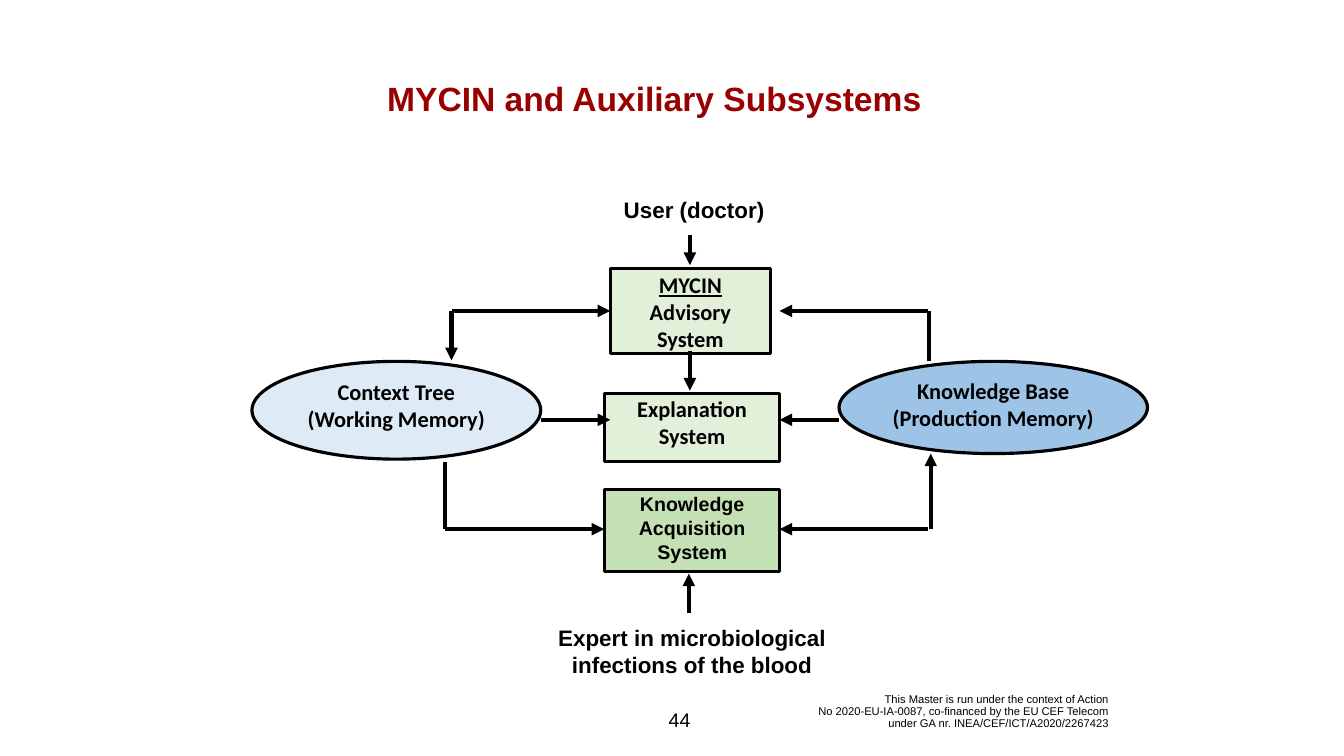
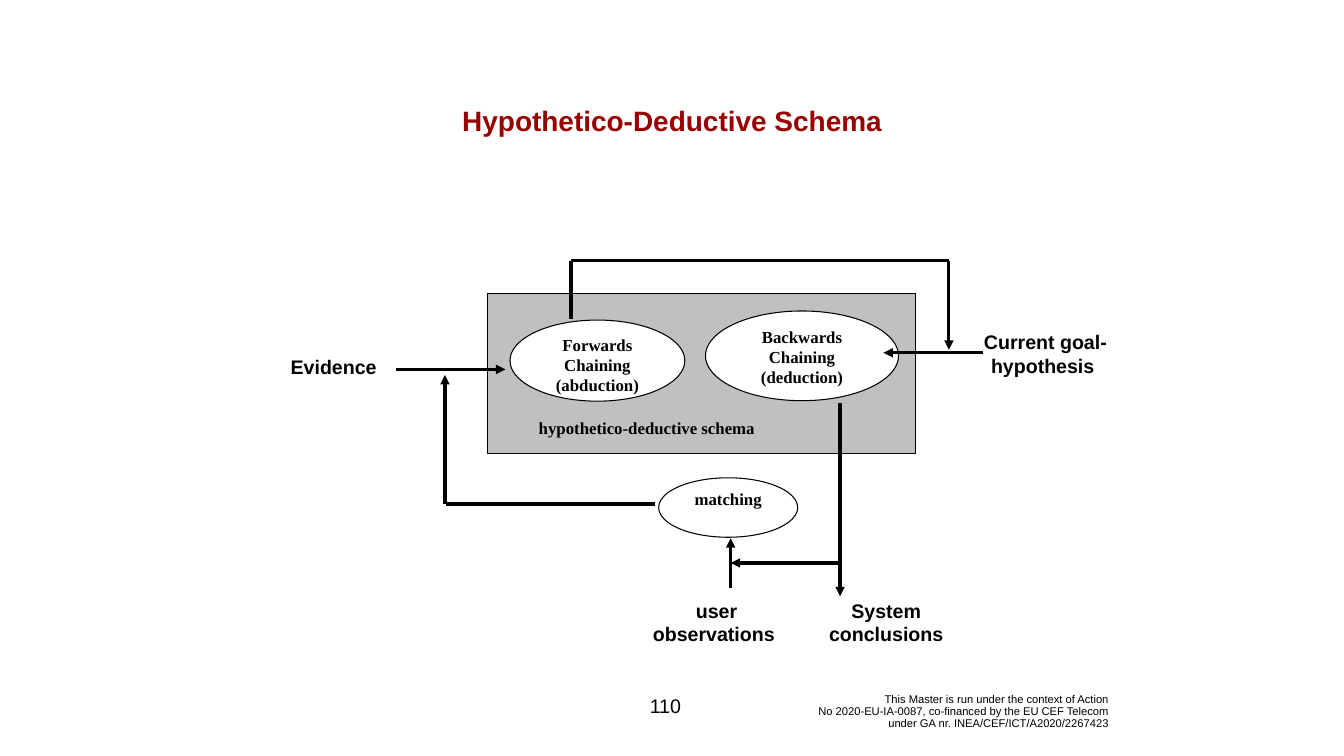
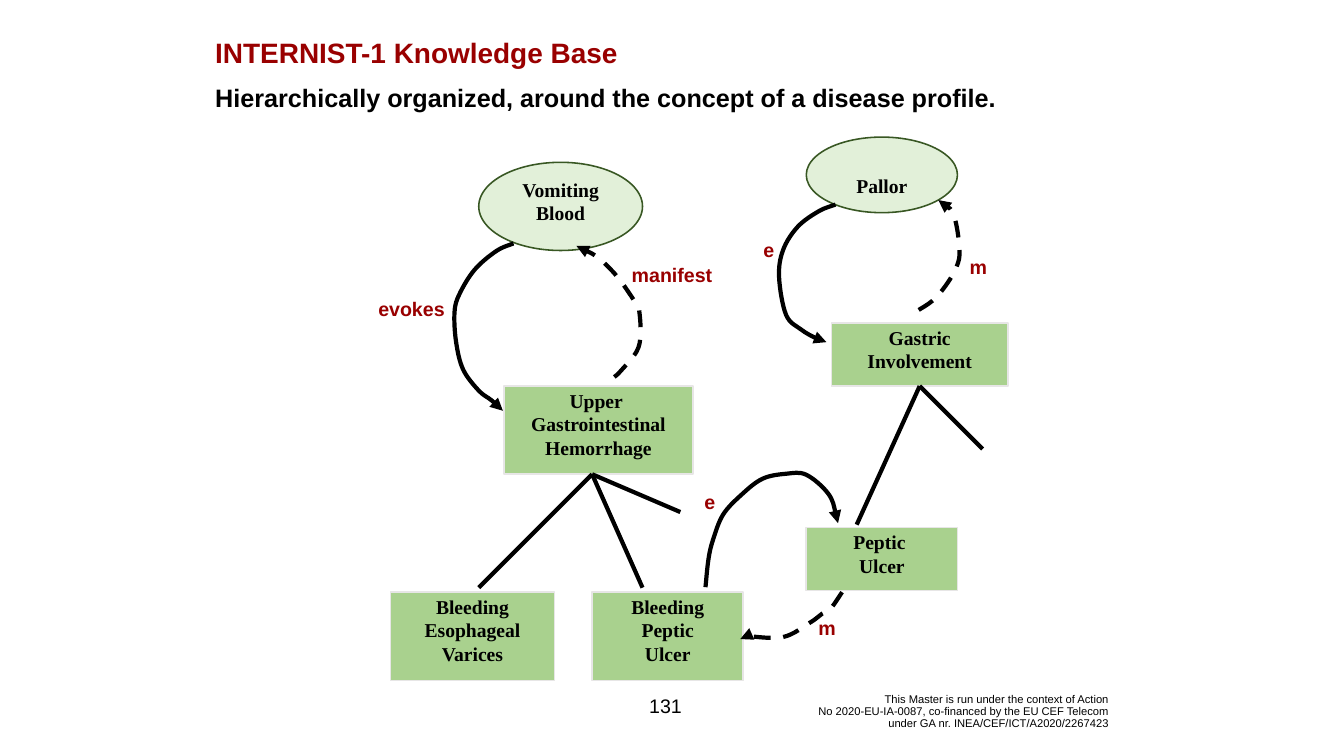
"""Build three slides on the MYCIN and INTERNIST-1 expert systems."""
import lxml.etree
import pptx
import pptx.dml.color
import pptx.enum.dml
import pptx.enum.shapes
import pptx.enum.text
import pptx.oxml.ns
import pptx.util

Inches, Pt = pptx.util.Inches, pptx.util.Pt
RGB = pptx.dml.color.RGBColor
Align = pptx.enum.text.PP_ALIGN
Anchor = pptx.enum.text.MSO_ANCHOR
Kind = pptx.enum.shapes.MSO_SHAPE
qn = pptx.oxml.ns.qn

BLACK = RGB(0x00, 0x00, 0x00)
WHITE = RGB(0xFF, 0xFF, 0xFF)
RED = RGB(0x99, 0x00, 0x00)
GRAY = RGB(0xC0, 0xC0, 0xC0)
PALE = RGB(0xE2, 0xF0, 0xD9)
MINT = RGB(0xC5, 0xE0, 0xB4)
GREEN = RGB(0xA9, 0xD1, 0x8E)
FOREST = RGB(0x38, 0x57, 0x23)
SILVER = RGB(0xE7, 0xE6, 0xE6)
ICE = RGB(0xDE, 0xEB, 0xF7)
SKY = RGB(0x9D, 0xC3, 0xE6)

RECT, OVAL = Kind.RECTANGLE, Kind.OVAL
SANS, SERIF, BODY = "Arial", "Times New Roman", "Calibri"

CREDIT = [
    "This Master is run under the context of Action",
    "No 2020-EU-IA-0087, co-financed by the EU CEF Telecom",
    "under GA nr. INEA/CEF/ICT/A2020/2267423",
]

MYCIN = {
    "title": ((5.83, 1.5, 14.5, 0.91), [("MYCIN and Auxiliary Subsystems ", 48, RED)], Align.CENTER),
    "page": ("44", 12.93, 13.87),
    "look": {"size": 32, "font": BODY},
    "edge": (BLACK, 4.5),
    "nodes": [
        (RECT, (12.11, 5.33, 3.18, 1.69), PALE, ["MYCIN", "Advisory System"], {"under": 1}),
        (RECT, (12, 7.8, 3.47, 1.36), PALE, ["Explanation System"], {}),
        (RECT, (12, 9.72, 3.47, 1.62), MINT, ["Knowledge Acquisition System"], {"size": 28, "font": SANS}),
        (OVAL, (5, 7.17, 5.73, 1.94), ICE, ["Context Tree", "(Working Memory)"], {}),
        (OVAL, (16.65, 7.17, 6.12, 1.83), SKY, ["Knowledge Base", "(Production Memory)"], {}),
    ],
    "weight": 6,
    "arrows": [
        (13.69, 4.67, 13.69, 5.26), (13.67, 12.17, 13.67, 11.38), (13.69, 6.96, 13.69, 7.75),
        (10.73, 8.33, 12.11, 8.33), (16.65, 8.33, 15.47, 8.33), (18.42, 6.17, 15.47, 6.17),
        (18.42, 10.5, 15.47, 10.5), (8.83, 10.5, 11.99, 10.5), (8.96, 6.17, 8.96, 7.15),
        (8.96, 6.17, 12.11, 6.17), (18.47, 10.5, 18.47, 9),
    ],
    "lines": [(8.83, 10.5, 8.83, 9.17), (18.43, 6.17, 18.43, 7.17)],
    "labels": [
        ("User (doctor) ", (11.17, 3.84, 5.33, 0.64), {"size": 32}),
        ("Expert in microbiological infections of the blood", (10.57, 12.33, 6.33, 1.18), {"size": 32}),
    ],
}

SCHEMA = {
    "title": ((5.17, 2, 16.33, 0.77), [("Hypothetico-Deductive Schema", 40, RED)], Align.CENTER),
    "page": ("110", 12.65, 13.61),
    "look": {"size": 24, "font": SERIF},
    "edge": (BLACK, 1.5),
    "nodes": [
        (RECT, (9.67, 5.83, 8.5, 3.17), GRAY, ["hypothetico-deductive schema"],
         {"align": Align.LEFT, "left": 1.02, "top": 2.45}),
        (OVAL, (10.12, 6.35, 3.47, 1.61), WHITE, ["Forwards Chaining", "(abduction)"], {}),
        (OVAL, (13.07, 9.48, 2.76, 1.18), WHITE, ["matching"], {}),
        (OVAL, (14, 6.17, 3.83, 1.78), WHITE, ["Backwards", "Chaining", "(deduction)"], {}),
    ],
    "weight": 4.5,
    "arrows": [
        (7.86, 7.33, 10.03, 7.33), (19.5, 7, 17.53, 7), (14.5, 11.67, 14.5, 10.68),
        (16.67, 11.17, 14.5, 11.17), (18.83, 5.17, 18.83, 6.94), (8.83, 10, 8.83, 7.44),
        (16.67, 8, 16.67, 11.83),
    ],
    "lines": [(11.33, 5.17, 18.83, 5.17), (13, 10, 8.86, 10), (11.33, 5.17, 11.33, 6.33)],
    "labels": [
        ("Current goal-hypothesis ", (18.83, 6.5, 3.83, 1.04), {}),
        ("Evidence", (5.67, 7, 2.5, 0.57), {"align": Align.LEFT}),
        ("System conclusions", (15.67, 11.83, 3.83, 1.04), {}),
        (" user observations", (12.5, 11.83, 3.33, 1.04), {}),
    ],
}

LEAF = {"edge": (SILVER, 2.25)}
INTERNIST = {
    "title": ((4.17, 0.66, 16.33, 1.65), [
        ("INTERNIST-1 Knowledge Base", 40, RED),
        ("Hierarchically organized, around the concept of a disease profile.", 36, BLACK),
    ], Align.LEFT),
    "page": ("131", 12.65, 13.61),
    "look": {"size": 28, "font": SERIF},
    "edge": (FOREST, 2.25),
    "nodes": [
        (OVAL, (9.5, 3.22, 3.25, 1.75), PALE, ["Vomiting", "Blood"], {}),
        (OVAL, (16, 2.72, 3, 1.5), PALE, ["Pallor"], {"top": 0.52}),
        (RECT, (10, 7.66, 3.75, 1.75), GREEN, ["Upper ", "Gastrointestinal", "Hemorrhage"], LEAF),
        (RECT, (11.75, 11.75, 3, 1.75), GREEN, ["Bleeding", "Peptic", "Ulcer"], LEAF),
        (RECT, (7.75, 11.75, 3.25, 1.75), GREEN, ["Bleeding", "Esophageal", "Varices"], LEAF),
        (RECT, (16, 10.47, 3, 1.25), GREEN, ["Peptic ", "Ulcer"], LEAF),
        (RECT, (16.5, 6.41, 3.5, 1.25), GREEN, ["Gastric", "Involvement"], LEAF),
    ],
    "weight": 6,
    "arrows": [],
    "lines": [
        (11.75, 9.41, 9.5, 11.66), (11.75, 9.41, 12.75, 11.66), (11.75, 9.41, 13.5, 10.16),
        (18.25, 7.66, 17, 10.41), (18.25, 7.66, 19.5, 8.91),
    ],
    "evokes": [
        [(10.19, 4.83), (9.85, 4.98), (9.42, 5.35), (9.12, 5.83), (9.02, 6.19), (9.05, 6.78),
         (9.19, 7.33), (9.5, 7.75), (9.75, 7.94), (9.98, 8.15)],
        [(16.58, 4.06), (16.25, 4.19), (15.83, 4.5), (15.54, 4.96), (15.46, 5.5), (15.6, 6.25),
         (15.9, 6.54), (16.19, 6.71), (16.4, 6.79)],
        [(14, 11.65), (14.06, 11.09), (14.15, 10.71), (14.35, 10.21), (14.71, 9.82), (15.13, 9.5),
         (15.6, 9.4), (16, 9.42), (16.44, 9.8), (16.6, 10.25), (16.63, 10.38)],
    ],
    "manifests": [
        [(12.19, 7.48), (12.31, 7.37), (12.63, 6.98), (12.71, 6.65), (12.69, 6.21), (12.63, 6.04),
         (12.35, 5.62), (12.19, 5.42), (11.85, 5.1), (11.44, 4.88)],
        [(18.23, 6.15), (18.5, 5.97), (18.75, 5.69), (18.98, 5.3), (19.04, 4.94), (18.92, 4.26),
         (18.62, 3.97)],
        [(16.71, 11.75), (16.48, 12.08), (16.31, 12.18), (16.08, 12.35), (15.54, 12.64),
         (14.83, 12.62), (14.69, 12.58), (14.69, 12.68)],
    ],
    "labels": [
        (text, (x, y, wide, 0.57), {"color": RED}) for text, x, y, wide in [
            ("evokes", 7, 5.84, 2.33), ("manifest", 12.17, 5.17, 2.33), ("e", 14.67, 4.67, 1.17),
            ("m", 18.83, 5, 1.17), ("e", 13.5, 9.67, 1.17), ("m", 15.83, 12.17, 1.17),
        ]
    ],
}


def setup(shape, anchor=Anchor.TOP, left=0.1, top=0.05):
    frame = shape.text_frame
    frame.word_wrap = True
    frame.auto_size = pptx.enum.text.MSO_AUTO_SIZE.NONE
    frame.vertical_anchor = anchor
    frame.margin_left, frame.margin_right = Inches(left), Inches(0.1)
    frame.margin_top, frame.margin_bottom = Inches(top), Inches(0.05)
    return frame


def add_para(frame, first, align):
    para = frame.paragraphs[0] if first else frame.add_paragraph()
    para.alignment = align
    return para


def add_run(para, text, size, font=SANS, color=BLACK, bold=True, under=False):
    run = para.add_run()
    run.text = text
    face = run.font
    face.name, face.size, face.bold, face.underline = font, Pt(size), bold, under
    face.color.rgb = color


def add_box(slide, place, **frame):
    box = slide.shapes.add_textbox(*map(Inches, place))
    return box, setup(box, **frame)


def add_title(slide, place, rows, align):
    title = slide.shapes.title
    title.left, title.top, title.width, title.height = map(Inches, place)
    frame = setup(title)
    for i, (text, size, color) in enumerate(rows):
        para = add_para(frame, i == 0, align)
        para.space_before = Pt(19 if i else 0)
        add_run(para, text, size, color=color)


def add_label(slide, text, place, size=28, color=BLACK, align=Align.CENTER, bold=True, anchor=Anchor.TOP):
    frame = add_box(slide, place, anchor=anchor)[1]
    add_run(add_para(frame, True, align), text, size, color=color, bold=bold)


def add_node(slide, kind, place, fill, rows, edge, size, font, align=Align.CENTER, under=0, **pads):
    node = slide.shapes.add_shape(kind, *map(Inches, place))
    node.shadow.inherit = False
    node.fill.solid()
    node.fill.fore_color.rgb = fill
    node.line.color.rgb, node.line.width = edge[0], Pt(edge[1])
    frame = setup(node, **pads)
    for i, text in enumerate(rows):
        add_run(add_para(frame, i == 0, align), text, size, font, under=i < under)


def ink(shape, weight, tip, dash=False):
    line = shape.line
    line.color.rgb, line.width = BLACK, Pt(weight)
    if dash:
        line.dash_style = pptx.enum.dml.MSO_LINE.DASH
    if tip:
        stroke = shape.element.spPr.find(qn("a:ln"))
        lxml.etree.SubElement(stroke, qn("a:tailEnd"), type="triangle")


def add_line(slide, ends, weight, tip):
    line = slide.shapes.add_connector(pptx.enum.shapes.MSO_CONNECTOR.STRAIGHT, *map(Inches, ends))
    ink(line, weight, tip)
    lxml.etree.SubElement(line.element.spPr, qn("a:effectLst"))


def bend(curve):
    steps = list(curve.element.spPr.iter(qn("a:moveTo"), qn("a:lnTo")))
    spots = [tuple(int(step[0].get(axis)) for axis in "xy") for step in steps]
    knots = [spots[0], *spots, spots[-1]]
    for step, a, b, c, d in zip(steps[1:], knots, knots[1:], knots[2:], knots[3:]):
        arc = lxml.etree.Element(qn("a:cubicBezTo"))
        near = [q + (r - p) / 6 for p, q, r in zip(a, b, c)]
        far = [r - (s - q) / 6 for q, r, s in zip(b, c, d)]
        for x, y in (near, far, c):
            lxml.etree.SubElement(arc, qn("a:pt"), x=str(round(x)), y=str(round(y)))
        step.getparent().replace(step, arc)


def add_curve(slide, points, weight, dash):
    start, *rest = [tuple(map(Inches, point)) for point in points]
    pen = slide.shapes.build_freeform(*start)
    pen.add_line_segments(rest, close=False)
    curve = pen.convert_to_shape()
    bend(curve)
    curve.fill.background()
    curve.shadow.inherit = False
    ink(curve, weight, True, dash)


def add_credit(slide, layout):
    for holder in list(layout.placeholders):
        if holder.placeholder_format.idx:
            layout.shapes.element.remove(holder.element)
    box, frame = add_box(slide, (15.02, 13.74, 7.08, 0.76), anchor=Anchor.MIDDLE)
    para = add_para(frame, True, Align.RIGHT)
    para.line_spacing = 0.9
    for i, text in enumerate(CREDIT):
        if i:
            para.add_line_break()
        add_run(para, text, 16, bold=False)
    layout.shapes.element.append(box.element)


def add_slide(deck, layout, data):
    slide = deck.slides.add_slide(layout)
    if len(deck.slides) == 1:
        add_credit(slide, layout)
    add_title(slide, *data["title"])
    page, x, y = data["page"]
    add_label(slide, page, (x, y, 1.11, 0.8), bold=False, anchor=Anchor.MIDDLE)
    for kind, place, fill, rows, extra in data["nodes"]:
        look = {"edge": data["edge"], **data["look"], **extra}
        add_node(slide, kind, place, fill, rows, **look)
    for group, tip in (("arrows", True), ("lines", False)):
        for ends in data[group]:
            add_line(slide, ends, data["weight"], tip)
    for group, dash in (("evokes", False), ("manifests", True)):
        for points in data.get(group, []):
            add_curve(slide, points, data["weight"], dash)
    for text, place, extra in data["labels"]:
        add_label(slide, text, place, **extra)


def main():
    deck = pptx.Presentation()
    deck.slide_width, deck.slide_height = Inches(26.67), Inches(15)
    layout = deck.slide_layouts[5]
    for data in (MYCIN, SCHEMA, INTERNIST):
        add_slide(deck, layout, data)
    deck.save("out.pptx")


if __name__ == "__main__":
    main()
